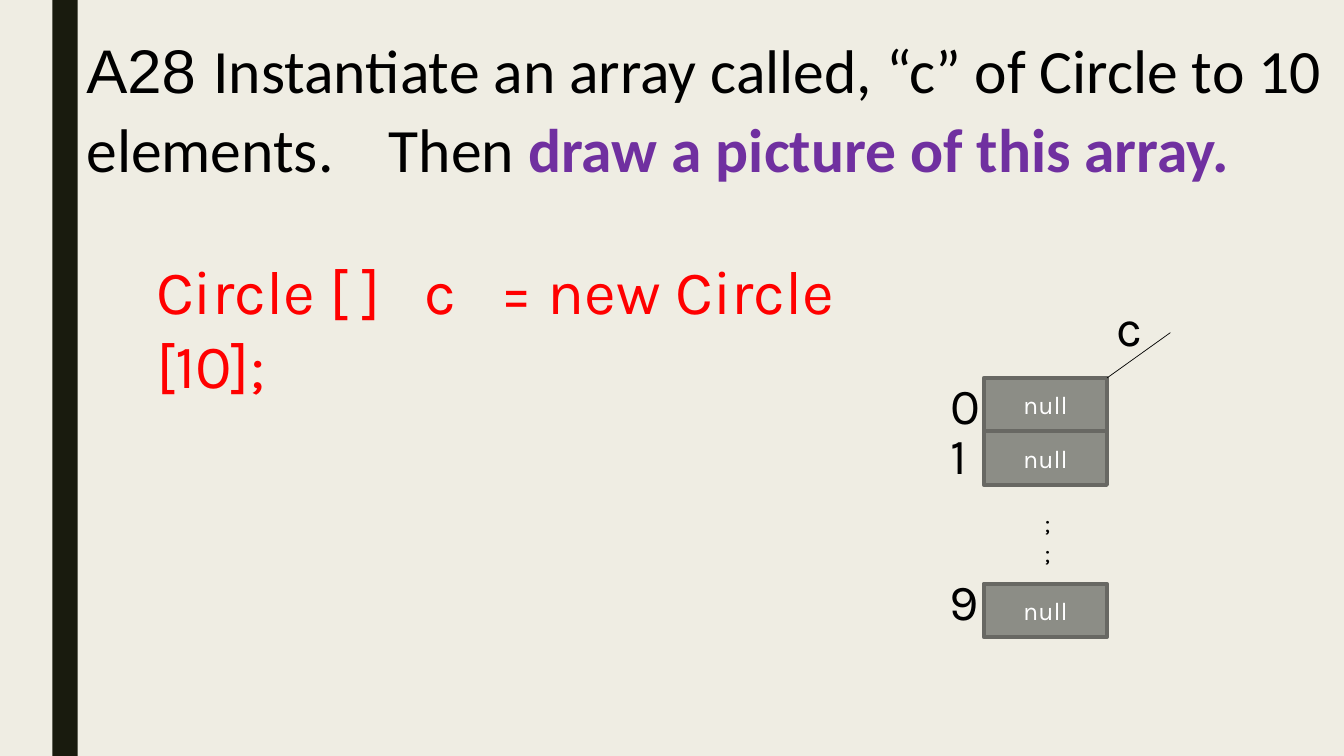
from dataclasses import dataclass

from lxml.etree import SubElement
from pptx import Presentation
from pptx.dml.color import RGBColor
from pptx.enum.shapes import MSO_CONNECTOR, MSO_SHAPE
from pptx.enum.text import MSO_ANCHOR, MSO_AUTO_SIZE, PP_ALIGN
from pptx.oxml.ns import qn
from pptx.util import Pt


@dataclass(frozen=True)
class Theme:
    background: str = "EFEDE3"
    bar: str = "191B0E"
    cell: str = "8C8D86"
    cell_border: str = "686863"
    text: str = "000000"
    cell_text: str = "FFFFFF"
    code: str = "FF0000"
    emphasis: str = "7030A0"
    large: int = 44
    label: int = 36
    small: int = 18
    number_font: str = "Arial"
    title_font: str = "Calibri"
    code_font: str = "Karla"


class SlideBuilder:
    def __init__(self, slide, theme):
        self.slide = slide
        self.theme = theme
        background = slide.background.fill
        background.solid()
        background.fore_color.rgb = RGBColor.from_string(theme.background)

    def add_run(self, paragraph, text, size, color, font=None, bold=False):
        run = paragraph.add_run()
        run.text = text
        values = {"name": font or self.theme.code_font, "size": Pt(size), "bold": bold}
        for attribute, value in values.items():
            setattr(run.font, attribute, value)
        run.font.color.rgb = RGBColor.from_string(color)

    def add_rectangle(self, left, top, width, height, fill, border=None):
        shape = self.slide.shapes.add_shape(
            MSO_SHAPE.RECTANGLE, Pt(left), Pt(top), Pt(width), Pt(height))
        shape.shadow.inherit = False
        shape.fill.solid()
        shape.fill.fore_color.rgb = RGBColor.from_string(fill)
        if border:
            shape.line.color.rgb = RGBColor.from_string(border)
            shape.line.width = Pt(2.75)
        else:
            shape.line.fill.background()
        return shape

    def add_cell(self, left, top, width, height, text):
        theme = self.theme
        shape = self.add_rectangle(left, top, width, height, theme.cell, theme.cell_border)
        shape.text_frame.vertical_anchor = MSO_ANCHOR.MIDDLE
        paragraph = shape.text_frame.paragraphs[0]
        paragraph.alignment = PP_ALIGN.CENTER
        self.add_run(paragraph, text, theme.small, theme.cell_text)

    def add_text(self, left, top, width, height, paragraphs, tabs=(), **spacing):
        """Add a text box; each paragraph is a list of add_run argument tuples."""
        box = self.slide.shapes.add_textbox(Pt(left), Pt(top), Pt(width), Pt(height))
        frame = box.text_frame
        frame.word_wrap = True
        frame.auto_size = MSO_AUTO_SIZE.SHAPE_TO_FIT_TEXT
        for index, runs in enumerate(paragraphs):
            paragraph = frame.add_paragraph() if index else frame.paragraphs[0]
            for attribute, value in spacing.items():
                setattr(paragraph, attribute, value)
            if tabs:
                properties = paragraph._p.get_or_add_pPr()
                tab_list = SubElement(properties, qn("a:tabLst"))
                for position in tabs:
                    SubElement(tab_list, qn("a:tab"), pos=str(Pt(position)), algn="l")
            for run in runs:
                self.add_run(paragraph, *run)

    def add_line(self, start, end, color, width):
        line = self.slide.shapes.add_connector(
            MSO_CONNECTOR.STRAIGHT, *(Pt(value) for value in (*start, *end)))
        line.line.color.rgb = RGBColor.from_string(color)
        line.line.width = Pt(width)
        SubElement(line._element.spPr, qn("a:effectLst"))


def main():
    presentation = Presentation()
    presentation.slide_width = Pt(960)
    presentation.slide_height = Pt(540)
    theme = Theme()
    builder = SlideBuilder(
        presentation.slides.add_slide(presentation.slide_layouts[6]), theme)

    builder.add_rectangle(37.4, 0, 18, 540, theme.bar)
    title = [
        ("A28 ", theme.large, theme.text, theme.number_font),
        ("Instantiate an array called, “c” of Circle to 10 elements.\tThen ",
         theme.large, theme.text, theme.title_font),
        ("draw a picture of this array.", theme.large, theme.emphasis,
         theme.title_font, True),
    ]
    builder.add_text(54.7, 15.8, 905, 134.6, [title], tabs=(216,),
                     line_spacing=1.07, space_after=Pt(8))
    code = ("Circle [ ]\tc\t= new Circle [10];", theme.large, theme.code)
    builder.add_text(104.4, 177.1, 581, 60.5, [[code]], tabs=(192, 246))

    cell_left, cell_width, cell_height, array_top = 702.7, 88, 38.2, 270
    for top in (array_top, array_top + cell_height, 416.9):
        builder.add_cell(cell_left, top, cell_width, cell_height, "null")

    array_corner = (cell_left + cell_width, array_top)
    builder.add_line(array_corner, (836, 237.6), theme.text, 0.5)

    labels = (("c", 790.6, 208.1), ("0", 671.8, 263.5),
              ("1", 671.8, 299.5), ("9", 671.3, 403.9))
    for text, left, top in labels:
        builder.add_text(left, top, 36, 51, [[(text, theme.label, theme.text)]])
    builder.add_text(738.7, 358.6, 16.6, 51, [[(";", theme.small, theme.text)]] * 2)

    presentation.save("out.pptx")


if __name__ == "__main__":
    main()
